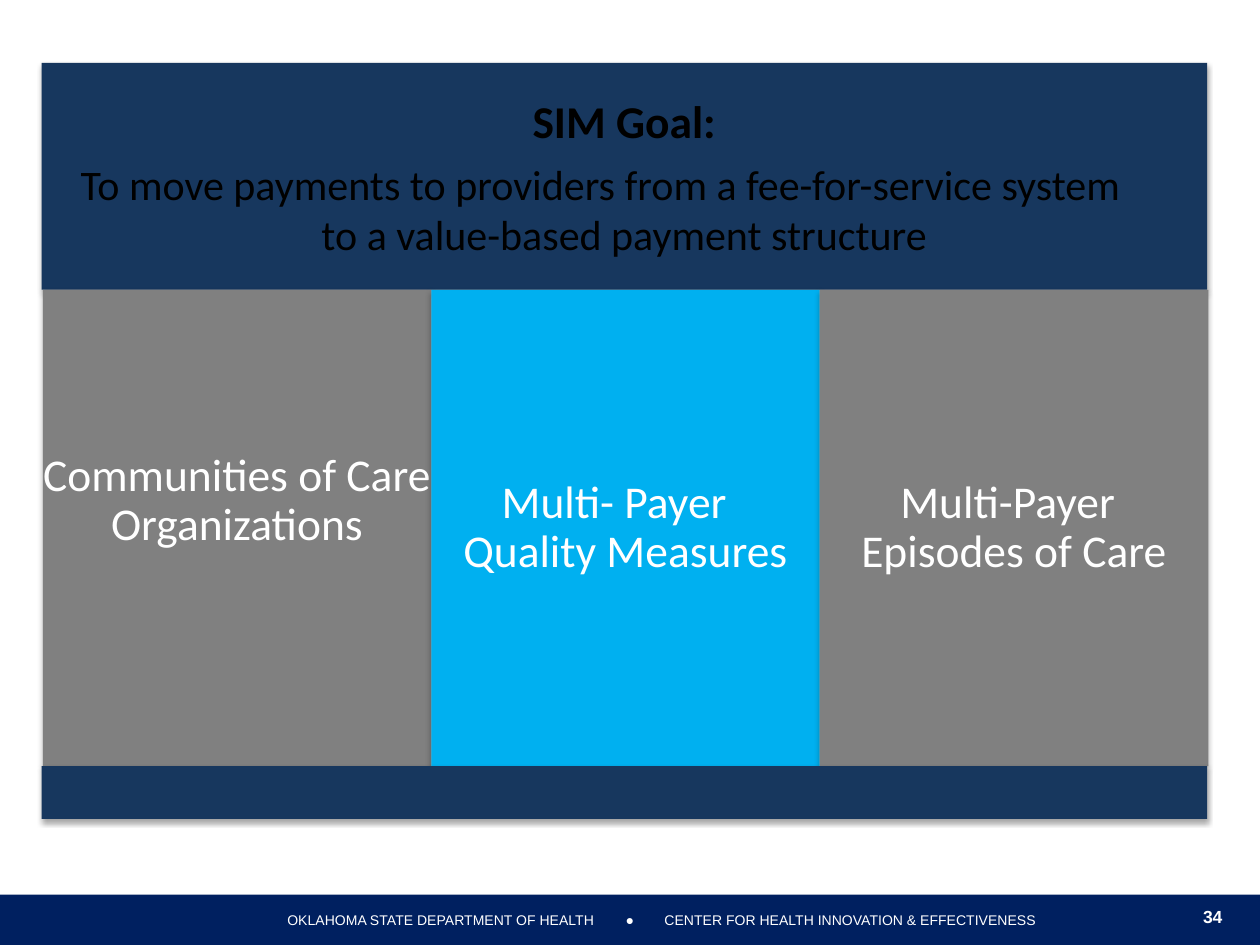
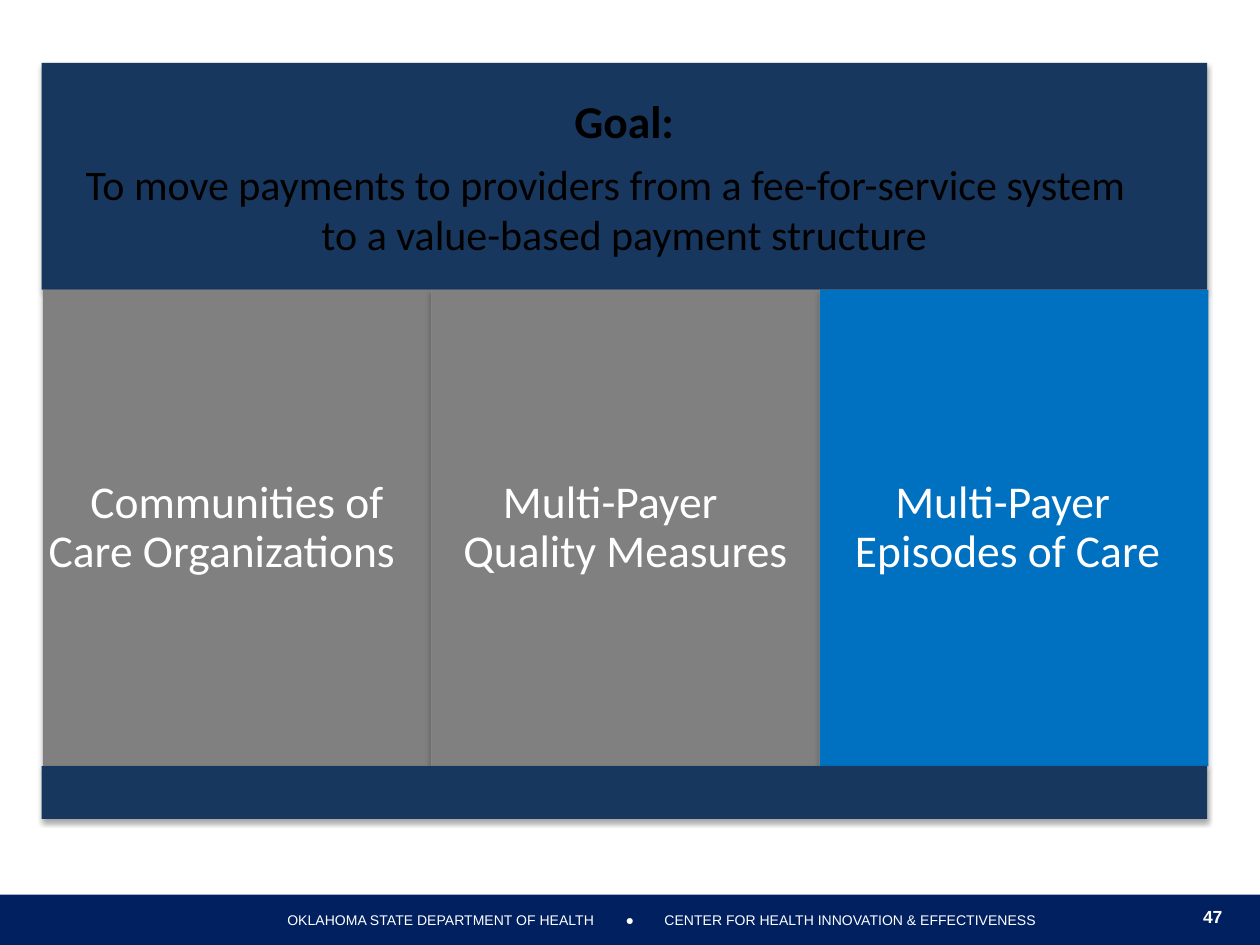
from pptx import Presentation
from pptx.util import Inches, Pt
from pptx.dml.color import RGBColor
from pptx.enum.shapes import MSO_SHAPE
from pptx.enum.text import PP_ALIGN, MSO_ANCHOR
from pptx.oxml import parse_xml
from pptx.oxml.ns import nsdecls

# Colours
NAVY, BAND, GREY = "002060", "17375E", "808080"
WHITE, BLACK = "FFFFFF", "000000"

# Grid: a block of three columns between two bands
WIDE, HIGH = 10, 7.5
LEFT, SPAN = 0.33, 9.25
COL = SPAN / 3
TOP, MID, LOW, END = 0.5, 2.3, 6.08, 6.5
FOOT = 7.1
BAR = HIGH - FOOT

SHADE = (f'<a:effectLst {nsdecls("a")}><a:outerShdw blurRad="39400" dist="22900" '
         'dir="5400000" rotWithShape="0"><a:srgbClr val="000000">'
         '<a:alpha val="35000"/></a:srgbClr></a:outerShdw></a:effectLst>')


def box(slide, x, y, w, h, fill=None, shade=False, inset=0):
    """Add a plain rectangle, or a text box when there is no fill."""
    spot = [Inches(n) for n in (x, y, w, h)]
    if fill:
        shape = slide.shapes.add_shape(MSO_SHAPE.RECTANGLE, *spot)
        shape.fill.solid()
        shape.fill.fore_color.rgb = RGBColor.from_string(fill)
        shape.line.fill.background()
        shape.shadow.inherit = False
        if shade:
            props = shape.element.spPr
            props.remove(props.find("{*}effectLst"))
            props.append(parse_xml(SHADE))
    else:
        shape = slide.shapes.add_textbox(*spot)
    frame = shape.text_frame
    frame.word_wrap = bool(fill)
    frame.vertical_anchor = MSO_ANCHOR.MIDDLE
    frame.margin_left = frame.margin_right = Inches(inset)
    frame.margin_top = frame.margin_bottom = Inches(inset)
    return frame


def say(para, lines, size, color, font="Calibri", bold=False, shift=(0, 0)):
    """Write centred lines; shift moves the first line and the rest sideways."""
    para.alignment = PP_ALIGN.CENTER
    first, rest = shift
    indent = 2 * (first - rest)
    left = max(0, -indent)
    props = para._p.get_or_add_pPr()
    for key, size_in in (("marL", left), ("marR", left - 2 * rest), ("indent", indent)):
        props.set(key, str(Inches(size_in)))
    for n, line in enumerate(lines):
        if n:
            para.add_line_break()
        run = para.add_run()
        run.text = line
        run.font.name, run.font.size, run.font.bold = font, Pt(size), bold
        run.font.color.rgb = RGBColor.from_string(color)


# Footer parts: left, width, words
NOTES = [(2, 3, "OKLAHOMA STATE DEPARTMENT OF HEALTH"),
         (5.25, 3, "CENTER FOR HEALTH INNOVATION & EFFECTIVENESS"),
         (4.75, 0.5, "●")]
GOAL = ["To move payments to providers from a fee-for-service system",
        "to a value-based payment structure"]

# Per slide: number, heading, goal shift, panels (lines, fill, shift, lift)
PAGES = [
    ("34", "SIM Goal:", -0.19, [
        (["Communities of Care", "Organizations"], GREY, (0, 0), 0.43),
        (["Multi- Payer", "Quality Measures"], "00B0F0", (-0.09, 0), 0),
        (["Multi-Payer", "Episodes of Care"], GREY, (-0.05, 0), 0)]),
    ("47", "Goal:", -0.15, [
        (["Communities of", "Care Organizations"], GREY, (0, -0.12), 0),
        (["Multi-Payer", "Quality Measures"], GREY, (-0.12, 0), 0),
        (["Multi-Payer", "Episodes of Care"], "0070C0", (-0.09, -0.05), 0)]),
]

deck = Presentation()
deck.slide_width, deck.slide_height = Inches(WIDE), Inches(HIGH)

for number, head, nudge, panels in PAGES:
    slide = deck.slides.add_slide(deck.slide_layouts[6])

    # Footer
    box(slide, 0, FOOT, WIDE, BAR, NAVY)
    for x, w, words in NOTES:
        note = box(slide, x, FOOT, w, BAR)
        say(note.paragraphs[0], [words], 8, WHITE, "Arial")

    # Goal band
    band = box(slide, LEFT, TOP, SPAN, MID - TOP, BAND, True, 0.11)
    say(band.paragraphs[0], [head], 26, BLACK, bold=True)
    say(band.add_paragraph(), GOAL, 24, BLACK, shift=(nudge, 0))
    for para in band.paragraphs:
        para.space_after = Pt(6)

    # Three panels
    for n, (lines, fill, shift, lift) in enumerate(panels):
        panel = box(slide, LEFT + 0.01 + n * COL, MID, COL, LOW - MID, fill, True)
        panel.margin_bottom = Inches(lift)
        say(panel.paragraphs[0], lines, 26, WHITE, shift=shift)
        panel.paragraphs[0].line_spacing = 0.9

    # Base band and slide number
    box(slide, LEFT, LOW, SPAN, END - LOW, BAND, True)
    page = box(slide, 9.5, 7.15, 0.25, 0.25)
    say(page.paragraphs[0], [number], 10, WHITE, "Arial", True)

deck.save("out.pptx")
